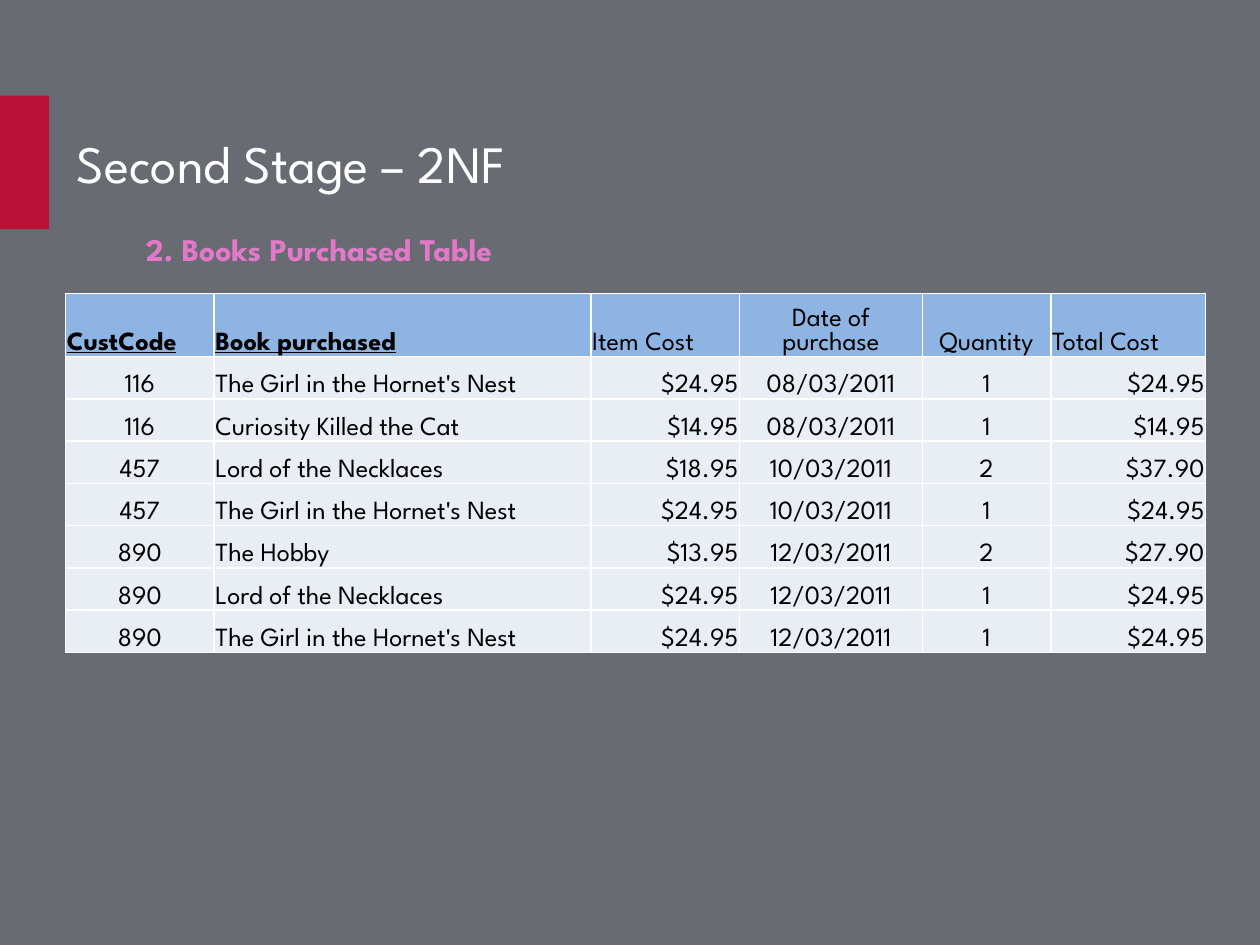
from lxml.etree import SubElement
from pptx import Presentation
from pptx.dml.color import RGBColor as RGB
from pptx.enum.shapes import MSO_SHAPE as SHAPE
from pptx.enum.text import MSO_ANCHOR as ANCHOR, PP_ALIGN as ALIGN
from pptx.oxml.ns import qn
from pptx.util import Inches, Pt

HUES = {"back": "696B73", "accent": "B81237", "white": "FFFFFF", "pink": "E478C8",
        "head": "8EB4E3", "body": "E9EDF4", "ink": "000000"}
FACE = "League Spartan"
WIDTHS = [1.18, 2.99, 1.18, 1.45, 1.02, 1.23]
HEADS = ["CustCode", "Book purchased", "Item Cost", "Date of purchase", "Quantity", "Total Cost"]
KEYS = HEADS[:2]
ROWS = [
    ["116", "The Girl in the Hornet's Nest", "$24.95", "08/03/2011", "1", "$24.95"],
    ["116", "Curiosity Killed the Cat", "$14.95", "08/03/2011", "1", "$14.95"],
    ["457", "Lord of the Necklaces", "$18.95", "10/03/2011", "2", "$37.90"],
    ["457", "The Girl in the Hornet's Nest", "$24.95", "10/03/2011", "1", "$24.95"],
    ["890", "The Hobby", "$13.95", "12/03/2011", "2", "$27.90"],
    ["890", "Lord of the Necklaces", "$24.95", "12/03/2011", "1", "$24.95"],
    ["890", "The Girl in the Hornet's Nest", "$24.95", "12/03/2011", "1", "$24.95"],
]
L, C, R = ALIGN.LEFT, ALIGN.CENTER, ALIGN.RIGHT
HEAD_ALIGN = [L, L, L, C, C, L]
BODY_ALIGN = [C, L, R, C, C, R]


def assign(item, **values):
    """Set each named attribute of an item."""
    for name, value in values.items():
        setattr(item, name, value)


def paint(item, hue):
    """Give a shape, cell or background a solid fill."""
    item.fill.solid()
    item.fill.fore_color.rgb = RGB.from_string(HUES[hue])


def write(frame, text, size, hue, align=L, bold=False, underline=False):
    """Put one formatted line of text in a frame."""
    para = frame.paragraphs[0]
    para.alignment = align
    run = para.add_run()
    run.text = text
    assign(run.font, name=FACE, size=Pt(size), bold=bold, underline=underline)
    run.font.color.rgb = RGB.from_string(HUES[hue])


def edge(cell):
    """Draw a thin white border on all sides of a cell."""
    props = cell._tc.get_or_add_tcPr()
    for at, side in enumerate(("a:lnL", "a:lnR", "a:lnT", "a:lnB")):
        line = SubElement(props, qn(side), w=str(Pt(1)))
        fill = SubElement(line, qn("a:solidFill"))
        SubElement(fill, qn("a:srgbClr"), val=HUES["white"])
        props.insert(at, line)


def add_title(slide, left, top, width, height):
    """Place the accent block and the title beside it."""
    block = slide.shapes.add_shape(SHAPE.RECTANGLE, 0, top, Inches(0.39), height)
    block.shadow.inherit = False
    paint(block, "accent")
    block.line.fill.background()
    title = slide.shapes.title
    assign(title, left=left, top=top, width=width, height=height)
    title.text_frame.vertical_anchor = ANCHOR.MIDDLE
    write(title.text_frame, "Second Stage – 2NF", 30, "white")


def add_label(slide, left, top, width, height):
    """Place the heading above the table."""
    frame = slide.shapes.add_textbox(left, top, width, height).text_frame
    frame.word_wrap = True
    write(frame, "2. Books Purchased Table", 18, "pink", bold=True)


def add_books(slide, left, top, width, height):
    """Place the table of purchases, with its key columns underlined."""
    data = [HEADS] + ROWS
    table = slide.shapes.add_table(len(data), len(HEADS), left, top, width, height).table
    for col, size in zip(table.columns, WIDTHS):
        col.width = Inches(size)
    tall = Inches(0.5)
    for r, (row, words) in enumerate(zip(table.rows, data)):
        row.height = tall if r == 0 else (height - tall) // len(ROWS)
        aligns = BODY_ALIGN if r else HEAD_ALIGN
        for cell, text, align in zip(row.cells, words, aligns):
            inset = Inches(0.01)
            assign(cell, margin_left=inset, margin_right=inset, margin_top=inset,
                   margin_bottom=0, vertical_anchor=ANCHOR.BOTTOM)
            paint(cell, "body" if r else "head")
            edge(cell)
            key = text in KEYS
            write(cell.text_frame, text, 15, "ink", align, key, key)


def main():
    """Build the slide and save it."""
    deck = Presentation()
    assign(deck, slide_width=Inches(10), slide_height=Inches(7.5))
    slide = deck.slides.add_slide(deck.slide_layouts[5])
    paint(slide.background, "back")
    add_title(slide, Inches(0.51), Inches(0.76), Inches(9), Inches(1.06))
    add_books(slide, Inches(0.52), Inches(2.33), Inches(9.05), Inches(2.85))
    add_label(slide, Inches(1.06), Inches(1.78), Inches(3.41), Inches(0.4))
    deck.save("out.pptx")


if __name__ == "__main__":
    main()
